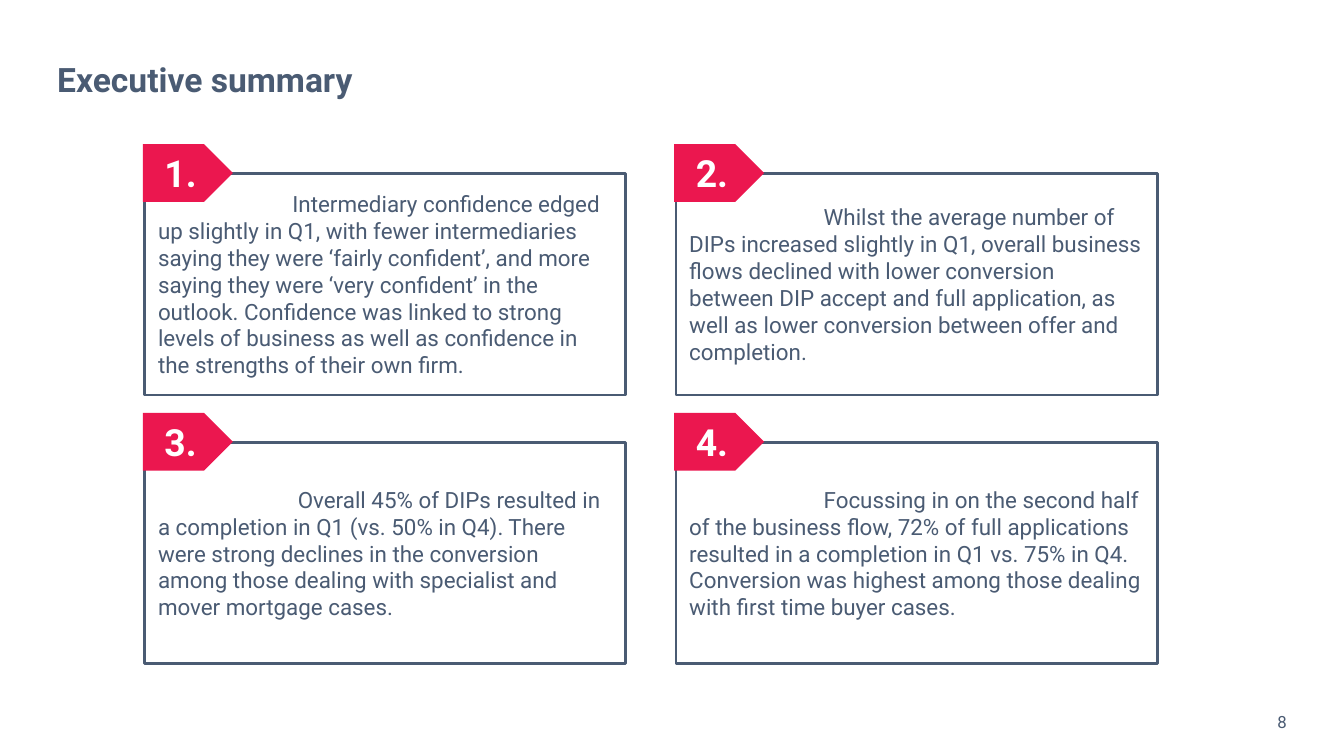
from pptx import Presentation
from pptx.dml.color import RGBColor
from pptx.enum.shapes import MSO_SHAPE
from pptx.enum.text import MSO_ANCHOR, MSO_AUTO_SIZE, PP_ALIGN
from pptx.util import Inches, Pt

RECTANGLE, PENTAGON = MSO_SHAPE.RECTANGLE, MSO_SHAPE.PENTAGON
MIDDLE, NO_FIT = MSO_ANCHOR.MIDDLE, MSO_AUTO_SIZE.NONE
LEFT, CENTER, RIGHT = PP_ALIGN.LEFT, PP_ALIGN.CENTER, PP_ALIGN.RIGHT

SLATE = RGBColor(0x4A, 0x5B, 0x73)
CRIMSON = RGBColor(0xEB, 0x17, 0x4F)
WHITE = RGBColor(0xFF, 0xFF, 0xFF)

TITLE_ONLY = 5
GRID_COLUMNS = GRID_ROWS = 100
CARD_LEFT, CARD_TOP = 10.77, 22.93
COLUMN_PITCH, ROW_PITCH = 39.53, 35.56
CARDS_ACROSS = 2

FINDINGS = [
    ("Intermediary confidence edged up slightly in Q1, with fewer intermediaries "
     "saying they were ‘fairly confident’, and more saying they were ‘very "
     "confident’ in the outlook. Confidence was linked to strong levels of business "
     "as well as confidence in the strengths of their own firm.", 1),
    ("Whilst the average number of DIPs increased slightly in Q1, overall business "
     "flows declined with lower conversion between DIP accept and full application, "
     "as well as lower conversion between offer and completion.", 1),
    ("Overall 45% of DIPs resulted in a completion in Q1 (vs. 50% in Q4). There were "
     "strong declines in the conversion among those dealing with specialist and "
     "mover mortgage cases.", 1.04),
    ("Focussing in on the second half of the business flow, 72% of full applications "
     "resulted in a completion in Q1 vs. 75% in Q4. Conversion was highest among "
     "those dealing with first time buyer cases.", 1),
]


def write_text(box, text, size=12, color=SLATE, bold=False, align=LEFT,
               indent=0, spacing=None, margins=(0.1, 0.05)):
    frame = box.text_frame
    frame.word_wrap = True
    frame.auto_size = NO_FIT
    frame.vertical_anchor = MIDDLE
    frame.margin_left = frame.margin_right = Inches(margins[0])
    frame.margin_top = frame.margin_bottom = Inches(margins[1])
    para = frame.paragraphs[0]
    para.alignment = align
    if spacing:
        para.line_spacing = spacing
    if indent:
        properties = para._p.get_or_add_pPr()
        properties.set("marL", "0")
        properties.set("indent", str(Inches(indent)))
    span = para.add_run()
    span.text = text
    span.font.name = "Roboto"
    span.font.size = Pt(size)
    span.font.bold = bold
    span.font.color.rgb = color


class SummaryPage:
    narrow_margins = (0.07, 0.04)

    def __init__(self, deck):
        self.column = deck.slide_width / GRID_COLUMNS
        self.row = deck.slide_height / GRID_ROWS
        self.page = deck.slides.add_slide(deck.slide_layouts[TITLE_ONLY])

    def area(self, left, top, width, height):
        return (int(left * self.column), int(top * self.row),
                int(width * self.column), int(height * self.row))

    def title(self, text):
        box = self.page.shapes.title
        box.left, box.top, box.width, box.height = self.area(3.55, 5.16, 92.9, 11.2)
        write_text(box, text, size=18, bold=True, spacing=0.9,
                   margins=self.narrow_margins)

    def page_number(self, number):
        box = self.page.shapes.add_textbox(*self.area(89.35, 93.33, 7.1, 4.27))
        write_text(box, str(number), size=9, align=RIGHT,
                   margins=self.narrow_margins)

    def filled_shape(self, kind, area, fill):
        shape = self.page.shapes.add_shape(kind, *self.area(*area))
        shape.shadow.inherit = False
        shape.fill.solid()
        shape.fill.fore_color.rgb = fill
        return shape

    def card(self, left, top, text, indent):
        card = self.filled_shape(RECTANGLE, (left, top, 35.8, 29.33), WHITE)
        card.line.color.rgb = SLATE
        card.line.width = Pt(1.5)
        write_text(card, text, indent=indent)

    def number_tag(self, left, top, number):
        tag = self.filled_shape(PENTAGON, (left, top, 6.7, 7.64), CRIMSON)
        tag.line.fill.background()
        write_text(tag, f"{number}.", size=20, color=WHITE, bold=True, align=CENTER)


def main():
    deck = Presentation()
    deck.slide_width = Inches(10)
    deck.slide_height = deck.slide_width * 9 // 16
    summary = SummaryPage(deck)
    summary.title("Executive summary")
    summary.page_number(8)
    places = [(CARD_LEFT + index % CARDS_ACROSS * COLUMN_PITCH,
               CARD_TOP + index // CARDS_ACROSS * ROW_PITCH)
              for index in range(len(FINDINGS))]
    for (left, top), (finding, indent) in zip(places, FINDINGS):
        summary.card(left, top, finding, indent)
    for number, (left, top) in enumerate(places, start=1):
        summary.number_tag(left - 0.14, top - 3.86, number)
    deck.save("out.pptx")


if __name__ == "__main__":
    main()
